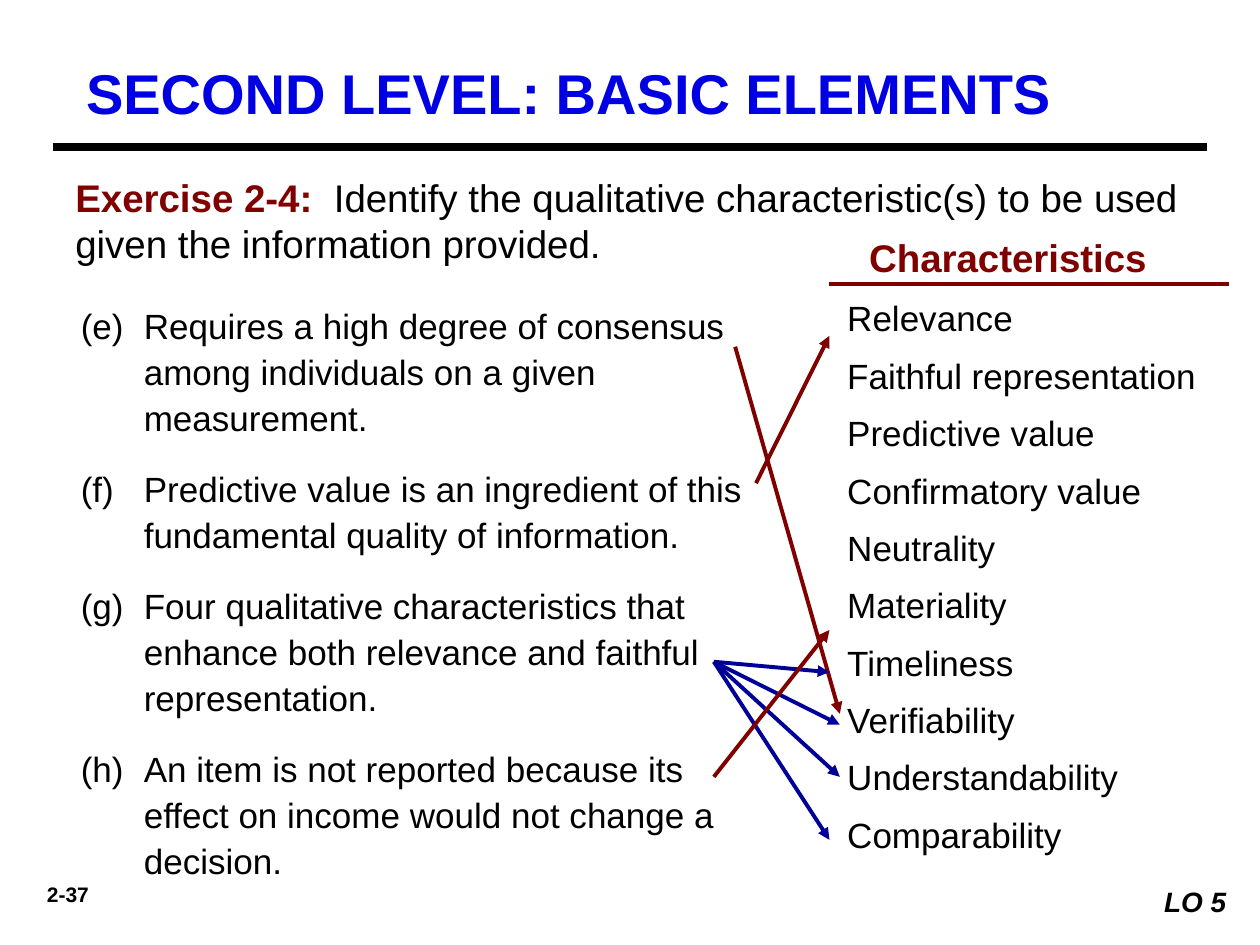
from lxml.etree import SubElement
from pptx import Presentation
from pptx.dml.color import RGBColor
from pptx.enum.shapes import MSO_CONNECTOR, MSO_SHAPE
from pptx.enum.text import MSO_ANCHOR, MSO_AUTO_SIZE, PP_ALIGN
from pptx.oxml.ns import qn
from pptx.util import Cm, Pt

# Content
TITLE = "SECOND LEVEL: BASIC ELEMENTS"
EXERCISE = ("Exercise 2-4:", "  Identify the qualitative characteristic(s) to be "
            "used given the information provided.")
QUESTIONS = [
    "Requires a high degree of consensus among individuals on a given measurement.",
    "Predictive value is an ingredient of this fundamental quality of information.",
    "Four qualitative characteristics that enhance both relevance and faithful "
    "representation.",
    "An item is not reported because its effect on income would not change a decision.",
]
HEADING = "Characteristics"
CHARACTERISTICS = [
    "Relevance", "Faithful representation", "Predictive value",
    "Confirmatory value", "Neutrality", "Materiality", "Timeliness",
    "Verifiability", "Understandability", "Comparability",
]
PAGE, OBJECTIVE = "2-37", "LO 5"

COLORS = {"title": "0000E2", "accent": "800000", "fan": "000099",
          "text": "000000", "paper": "FFFFFF"}

# Answer arrows in cm: colour, start, ends
ANSWERS = [
    ("accent", (14.82, 6.99), [(16.93, 14.39)]),
    ("accent", (15.24, 9.74), [(16.72, 6.77)]),
    ("fan", (14.39, 13.34),
     [(16.72, 13.55), (16.93, 14.61), (16.93, 15.66), (16.72, 16.93)]),
    ("accent", (14.39, 15.66), [(16.72, 12.7)]),
]

# Formats
BODY = {"size": Pt(20)}
LEAD = {"size": Pt(22)}
STRONG = {"size": Pt(22), "bold": True}
QUESTION_PARA = {"line_spacing": 1.1, "space_before": Pt(10), "space_after": Pt(4)}
LIST_PARA = {"line_spacing": 1.2, "space_after": Pt(4)}


def add_run(p, text, font, color="text"):
    r = p.add_run()
    r.text = text
    r.font.name = "Arial"
    r.font.color.rgb = RGBColor.from_string(COLORS[color])
    for key, value in font.items():
        setattr(r.font, key, value)


def add_box(s, box, wrap=True):
    tf = s.shapes.add_textbox(*map(Cm, box)).text_frame
    tf.word_wrap = wrap
    return tf


def add_list(tf, items, para, number_from=None):
    for i, text in enumerate(items):
        p = tf.add_paragraph() if i else tf.paragraphs[0]
        for key, value in para.items():
            setattr(p, key, value)
        pPr = p._p.get_or_add_pPr()
        pPr.set("marL", str(Cm(1.59)))
        pPr.set("indent", str(Cm(-1.27)))
        if number_from:
            SubElement(pPr, qn("a:buFont"), typeface="Arial")
            SubElement(pPr, qn("a:buAutoNum"), type="alphaLcParenBoth",
                       startAt=str(number_from))
        add_run(p, text, BODY)


def add_line(s, start, end, color, width=2.25, arrow=False):
    line = s.shapes.add_connector(MSO_CONNECTOR.STRAIGHT, *map(Cm, start + end))
    line.line.color.rgb = RGBColor.from_string(COLORS[color])
    line.line.width = Pt(width)
    if arrow:
        SubElement(line.line._get_or_add_ln(), qn("a:tailEnd"), type="triangle",
                   w="med", len="med")
    SubElement(line._element.spPr, qn("a:effectLst"))


def main():
    prs = Presentation()
    prs.slide_width, prs.slide_height = Cm(25.4), Cm(19.05)
    s = prs.slides.add_slide(prs.slide_layouts[5])

    # Title and rule
    title = s.shapes.title
    title.left, title.top, title.width, title.height = map(Cm, (1.48, 1.06, 22.86, 1.55))
    tf = title.text_frame
    tf.vertical_anchor = MSO_ANCHOR.TOP
    tf.auto_size = MSO_AUTO_SIZE.NONE
    tf.paragraphs[0].alignment = PP_ALIGN.LEFT
    add_run(tf.paragraphs[0], TITLE, {"size": Pt(32), "bold": True}, "title")
    add_line(s, (1.06, 2.96), (24.34, 2.96), "text", 4.5)

    # Exercise and its questions
    p = add_box(s, (1.27, 3.39, 23.71, 2.12)).paragraphs[0]
    add_run(p, EXERCISE[0], STRONG, "accent")
    add_run(p, EXERCISE[1], LEAD)
    add_list(add_box(s, (1.06, 5.93, 14.18, 12.4)), QUESTIONS, QUESTION_PARA,
             number_from=5)

    # Characteristics column
    tf = add_box(s, (16.72, 4.66, 7.2, 1.06), wrap=False)
    tf.vertical_anchor = MSO_ANCHOR.MIDDLE
    tf.paragraphs[0].alignment = PP_ALIGN.CENTER
    add_run(tf.paragraphs[0], HEADING, STRONG, "accent")
    add_line(s, (16.72, 5.72), (24.77, 5.72), "accent")
    add_list(add_box(s, (16.51, 5.69, 8.26, 12.07)), CHARACTERISTICS, LIST_PARA)

    # Answer arrows
    for color, start, ends in ANSWERS:
        for end in ends:
            add_line(s, start, end, color, arrow=True)

    # Page number and learning objective
    p = add_box(s, (0.2, 17.65, 2.34, 0.76)).paragraphs[0]
    p.alignment = PP_ALIGN.CENTER
    add_run(p, PAGE, {"size": Pt(12), "bold": True})

    sp = s.shapes.add_shape(MSO_SHAPE.RECTANGLE, *map(Cm, (21.79, 17.7, 3.18, 0.94)))
    sp.shadow.inherit = False
    sp.fill.solid()
    sp.fill.fore_color.rgb = RGBColor.from_string(COLORS["paper"])
    sp.line.fill.background()
    sp.text_frame.vertical_anchor = MSO_ANCHOR.TOP
    p = sp.text_frame.paragraphs[0]
    p.alignment = PP_ALIGN.RIGHT
    add_run(p, OBJECTIVE, {"size": Pt(16), "bold": True, "italic": True})

    prs.save("out.pptx")


if __name__ == "__main__":
    main()
